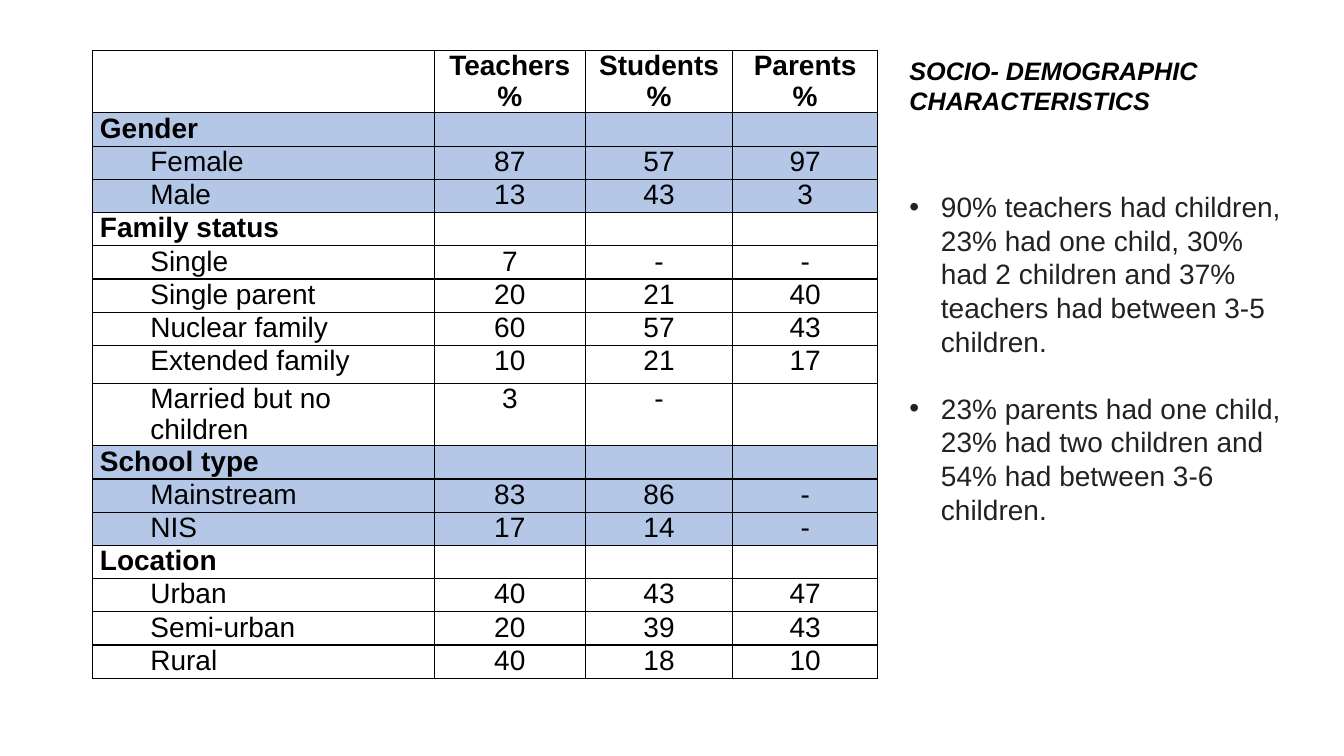
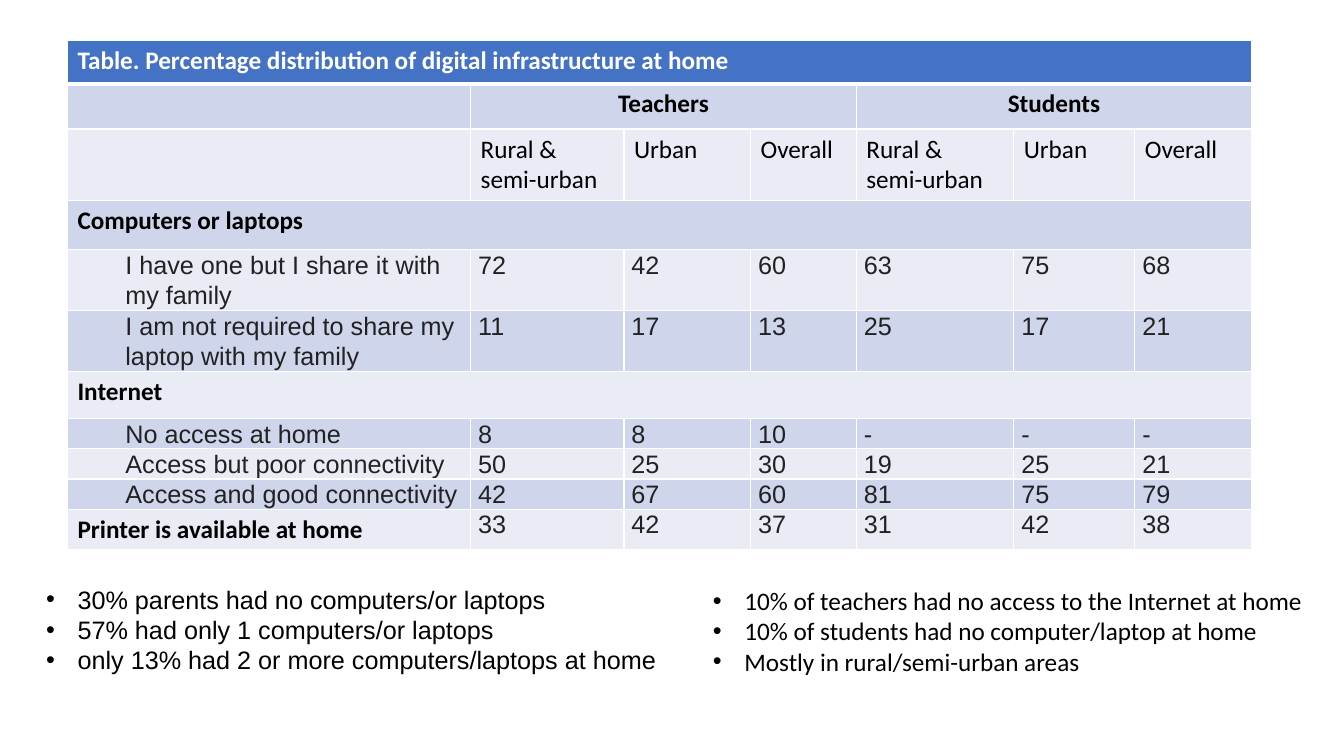
from dataclasses import dataclass, replace

from lxml import etree
from pptx import Presentation
from pptx.dml.color import RGBColor
from pptx.enum.text import MSO_ANCHOR, MSO_AUTO_SIZE, PP_ALIGN
from pptx.oxml.ns import qn
from pptx.util import Pt

LEFT, CENTER = PP_ALIGN.LEFT, PP_ALIGN.CENTER
TOP, MIDDLE = MSO_ANCHOR.TOP, MSO_ANCHOR.MIDDLE
NO_FIT = MSO_AUTO_SIZE.NONE

BLACK = RGBColor(0x00, 0x00, 0x00)
WHITE = RGBColor(0xFF, 0xFF, 0xFF)
GREY = RGBColor(0x22, 0x22, 0x22)
SKY = RGBColor(0xB4, 0xC7, 0xE7)
BLUE = RGBColor(0x44, 0x72, 0xC4)
BANDS = (RGBColor(0xE9, 0xEB, 0xF5), RGBColor(0xCF, 0xD5, 0xEA))

TITLE_LIST, TWO_LISTS = 1, 3  # layouts of the template
HANG = 22.5


@dataclass(frozen=True)
class Look:
    font: str = "Arial"
    size: float = 20
    color: RGBColor = BLACK
    bold: bool = False
    italic: bool = False
    align: PP_ALIGN = LEFT
    indent: float = 0
    hang: float = 0
    lines: float = 1
    before: float = 0


@dataclass(frozen=True)
class Box:
    left: float
    top: float
    width: float
    height: float


# Text styles
HEAD = Look(size=18, bold=True, italic=True)
LIST = Look(color=GREY, indent=HANG, hang=HANG)
NOTE = replace(LIST, size=18, color=BLACK)
NOTE_ALT = replace(NOTE, font="Calibri")
GROUP = Look(bold=True)
ITEM = Look(indent=36)
VALUE = Look(align=CENTER)
COLUMN = replace(VALUE, bold=True)
LABEL = Look("Calibri", 18, bold=True)
SUB = replace(LABEL, bold=False)
FIGURE = Look(size=18, color=GREY, lines=1.07)
ANSWER = replace(FIGURE, indent=36)

# Socio-demographic table: group, then (item, teachers, students, parents)
PEOPLE = {
    "Gender": [("Female", "87", "57", "97"), ("Male", "13", "43", "3")],
    "Family status": [
        ("Single", "7", "-", "-"),
        ("Single parent", "20", "21", "40"),
        ("Nuclear family", "60", "57", "43"),
        ("Extended family", "10", "21", "17"),
        ("Married but no children", "3", "-", ""),
    ],
    "School type": [("Mainstream", "83", "86", "-"), ("NIS", "17", "14", "-")],
    "Location": [
        ("Urban", "40", "43", "47"),
        ("Semi-urban", "20", "39", "43"),
        ("Rural", "40", "18", "10"),
    ],
}
TALL = {"Extended family": 27, "Married but no children": 44.4}

# Infrastructure table: rows of one entry are group headings
ACCESS = [
    ("Computers or laptops",),
    ("I have one but I share it with my family",
     "72", "42", "60", "63", "75", "68"),
    ("I am not required to share my laptop with my family",
     "11", "17", "13", "25", "17", "21"),
    ("Internet",),
    ("No access at home", "8", "8", "10", "-", "-", "-"),
    ("Access but poor connectivity", "50", "25", "30", "19", "25", "21"),
    ("Access and good connectivity", "42", "67", "60", "81", "75", "79"),
    ("Printer is available at home", "33", "42", "37", "31", "42", "38"),
]


def write(par, text: str, look: Look) -> None:
    par.text = text
    par.alignment = look.align
    par.line_spacing = look.lines
    par.space_before, par.space_after = Pt(look.before), Pt(0)
    props = par._p.get_or_add_pPr()
    props.set("marL", str(Pt(look.indent)))
    props.set("indent", str(Pt(-look.hang)))
    font = par.font
    font.name, font.size = look.font, Pt(look.size)
    font.bold, font.italic = look.bold, look.italic
    font.color.rgb = look.color


def fill_box(shape, box: Box, texts: list[str], look: Look,
             anchor: MSO_ANCHOR = TOP, gap: float = 0) -> None:
    """Place a placeholder and write its paragraphs."""
    shape.left, shape.top = Pt(box.left), Pt(box.top)
    shape.width, shape.height = Pt(box.width), Pt(box.height)
    frame = shape.text_frame
    frame.word_wrap, frame.auto_size = True, NO_FIT
    frame.vertical_anchor = anchor
    for i, text in enumerate(texts):
        par = frame.add_paragraph() if i else frame.paragraphs[0]
        write(par, text, replace(look, before=gap if i else 0))


def add_grid(slide, left: float, top: float,
             widths: list[float], heights: list[float]):
    shape = slide.shapes.add_table(
        len(heights), len(widths), Pt(left), Pt(top),
        Pt(sum(widths)), Pt(sum(heights)))
    table = shape.table
    table.first_row = table.horz_banding = False
    for col, width in zip(table.columns, widths):
        col.width = Pt(width)
    for row, height in zip(table.rows, heights):
        row.height = Pt(height)
    return table


def paint(cell, fill: RGBColor | None, line: RGBColor,
          top: float = 1, bottom: float = 1) -> None:
    """Fill a cell and rule its four sides."""
    if fill is None:
        cell.fill.background()
    else:
        cell.fill.solid()
        cell.fill.fore_color.rgb = fill
    props = cell._tc.get_or_add_tcPr()
    sides = {"lnL": 1, "lnR": 1, "lnT": top, "lnB": bottom}
    for i, (side, width) in enumerate(sides.items()):
        edge = etree.Element(qn(f"a:{side}"), w=str(Pt(width)))
        solid = etree.SubElement(edge, qn("a:solidFill"))
        etree.SubElement(solid, qn("a:srgbClr"), val=str(line))
        props.insert(i, edge)


def put(cell, text: str, look: Look, tight: bool = True) -> None:
    if tight:
        cell.margin_left = cell.margin_right = Pt(5.4)
        cell.margin_top = cell.margin_bottom = Pt(0)
    write(cell.text_frame.paragraphs[0], text, look)


def add_people(deck) -> None:
    slide = deck.slides.add_slide(deck.slide_layouts[TITLE_LIST])
    fill_box(slide.shapes.title, Box(642.4, 36, 232, 51),
             ["SOCIO- DEMOGRAPHIC", "CHARACTERISTICS"], HEAD)
    body = slide.placeholders[1]
    body.fill.solid()
    body.fill.fore_color.rgb = WHITE
    fill_box(body, Box(642.4, 130.5, 288, 250), [
        "90% teachers had children, 23% had one child, 30% had 2 children "
        "and 37% teachers had between 3-5 children.",
        "23% parents had one child, 23% had two children and 54% had "
        "between 3-6 children.",
    ], LIST, MIDDLE, gap=24)

    # Rows as (texts, first look, other look, fill)
    rows = [(("", "Teachers %", "Students %", "Parents %"),
             GROUP, COLUMN, None)]
    for i, (group, items) in enumerate(PEOPLE.items()):
        fill = None if i % 2 else SKY
        rows.append(((group, "", "", ""), GROUP, VALUE, fill))
        rows += [(item, ITEM, VALUE, fill) for item in items]
    heights = [44.4] + [TALL.get(row[0][0], 23.73) for row in rows[1:]]
    table = add_grid(slide, 66, 36, [244.2, 108, 105.2, 103.6], heights)
    for r, (texts, first, other, fill) in enumerate(rows):
        for c, text in enumerate(texts):
            cell = table.cell(r, c)
            put(cell, text, other if c else first)
            paint(cell, fill, BLACK)


def add_access(deck) -> None:
    slide = deck.slides.add_slide(deck.slide_layouts[TWO_LISTS])
    title = slide.shapes.title
    title._element.getparent().remove(title._element)
    fill_box(slide.placeholders[1], Box(25.7, 413.5, 454, 94), [
        "30% parents had no computers/or laptops",
        "57% had only 1 computers/or laptops",
        "only 13% had 2 or more computers/laptops at home",
    ], NOTE)
    fill_box(slide.placeholders[2], Box(502, 414.6, 441, 73), [
        "10% of teachers had no access to the Internet at home",
        "10% of students had no computer/laptop at home",
        "Mostly in rural/semi-urban areas",
    ], NOTE_ALT)

    table = add_grid(
        slide, 48.2, 28.8, [288, 109.5, 90.5, 75.5, 112.5, 86.5, 83.5],
        [31, 32.4, 50.8, 35, 43.5, 43.5, 33.7, 21.5, 21.5, 21.5, 29])
    last = len(table.columns) - 1
    for r in range(len(table.rows)):
        for c in range(last + 1):
            paint(table.cell(r, c), BANDS[r % 2] if r else BLUE, WHITE,
                  bottom=1 if r else 3)

    # Heading rows
    table.cell(0, 0).merge(table.cell(0, last))
    put(table.cell(0, 0),
        "Table. Percentage distribution of digital infrastructure at home",
        replace(LABEL, color=WHITE), tight=False)
    for c, name in ((1, "Teachers"), (4, "Students")):
        table.cell(1, c).merge(table.cell(1, c + 2))
        put(table.cell(1, c), name, replace(LABEL, align=CENTER), tight=False)
        for i, text in enumerate(("Rural & semi-urban", "Urban", "Overall")):
            put(table.cell(2, c + i), text, SUB, tight=False)

    # Data rows
    for r, (name, *values) in enumerate(ACCESS, 3):
        label = not values or r == len(table.rows) - 1
        put(table.cell(r, 0), name, LABEL if label else ANSWER,
            tight=not label)
        if not values:
            table.cell(r, 0).merge(table.cell(r, last))
        for c, value in enumerate(values, 1):
            put(table.cell(r, c), value, FIGURE)


def main() -> None:
    deck = Presentation()
    deck.slide_width, deck.slide_height = Pt(960), Pt(540)
    add_people(deck)
    add_access(deck)
    deck.save("out.pptx")


if __name__ == "__main__":
    main()
